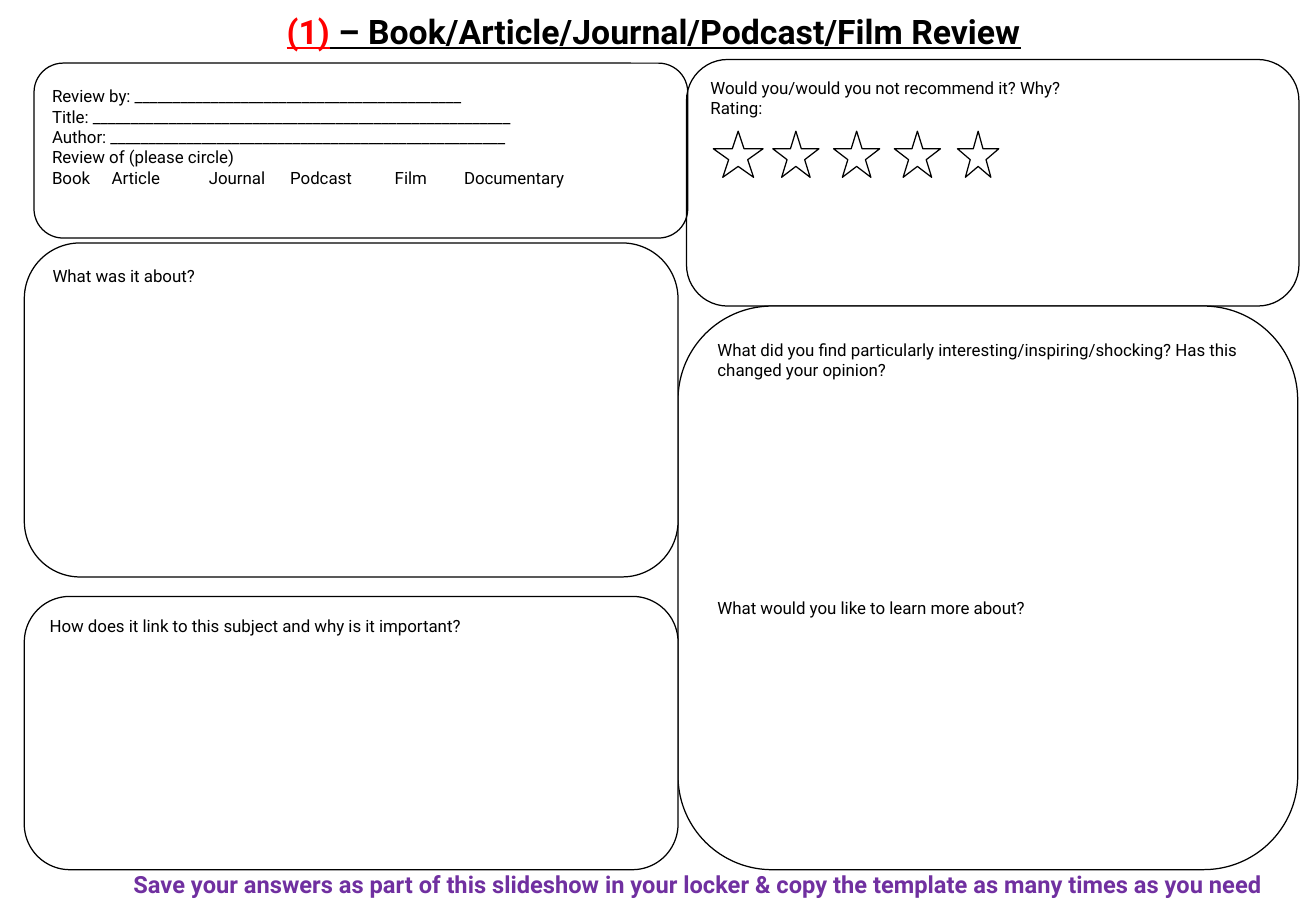
from lxml import etree
from pptx import Presentation
from pptx.dml.color import RGBColor
from pptx.enum.shapes import MSO_SHAPE
from pptx.enum.text import MSO_ANCHOR, PP_ALIGN
from pptx.oxml.ns import qn
from pptx.util import Pt

PX = 9144
PANEL = MSO_SHAPE.FLOWCHART_ALTERNATE_PROCESS
RECT = MSO_SHAPE.RECTANGLE
STAR = MSO_SHAPE.STAR_5_POINT
TOP = MSO_ANCHOR.TOP
LEFT = PP_ALIGN.LEFT
CENTER = PP_ALIGN.CENTER
FONT = "Roboto"
BLACK, WHITE, RED, PURPLE = "000000", "FFFFFF", "FF0000", "7030A0"

PANELS = [
    ((565, 49, 504, 203), ["Would you/would you not recommend it? Why?", "Rating:"]),
    ((558, 252, 510, 464), [
        "What did you find particularly interesting/inspiring/shocking? "
        "Has this changed your opinion?",
        "What would you like to learn more about?"]),
    ((20, 491, 538, 225), ["How does it link to this subject and why is it important?"]),
    ((20, 200, 538, 275), ["What was it about?"]),
    ((28, 52, 538, 144), []),
]
REVIEW_FIELDS = [
    "Review by: " + "_" * 43,
    "Title: " + "_" * 55,
    "Author: " + "_" * 52,
    "Review of (please circle)",
    "Book\tArticle\tJournal\tPodcast\tFilm\tDocumentary",
]
MEDIA_TABS = [49, 129, 196, 282, 339]
STARS = [(587, 41), (636, 38), (686, 38), (736, 38), (788, 34)]


def rgb(color):
    return RGBColor.from_string(color)


def px(*lengths):
    return [n * PX for n in lengths]


def add_shape(s, kind, box, fill=WHITE, line=BLACK):
    sp = s.shapes.add_shape(kind, *px(*box))
    sp.shadow.inherit = False
    if fill:
        sp.fill.solid()
        sp.fill.fore_color.rgb = rgb(fill)
    else:
        sp.fill.background()
    if line:
        sp.line.color.rgb = rgb(line)
        sp.line.width = Pt(0.75)
    else:
        sp.line.fill.background()
    return sp


def write(sp, lines, size=10, color=BLACK, bold=False, align=LEFT):
    tf = sp.text_frame
    tf.word_wrap = True
    tf.vertical_anchor = TOP
    tf.text = "\n".join(lines)
    for p in tf.paragraphs:
        p.alignment = align
        p.font.name = FONT
        p.font.size = Pt(size)
        p.font.bold = bold
        p.font.color.rgb = rgb(color)
    return tf.paragraphs


def set_tabs(p, stops):
    tabs = etree.Element(qn("a:tabLst"))
    for pos in px(*stops):
        etree.SubElement(tabs, qn("a:tab"), pos=str(pos), algn="l")
    p._p.get_or_add_pPr().insert(0, tabs)


def add_panels(s):
    for box, questions in PANELS:
        sp = add_shape(s, PANEL, box, fill=WHITE if questions else None)
        if questions:
            last = write(sp, questions)[-1]
            if last.text.startswith("What would"):
                last.space_before = Pt(129)


def add_title(s):
    sp = add_shape(s, RECT, (148, 4, 780, 40), line=None)
    p = write(sp, ["(1)"], size=20, bold=True, align=CENTER)[0]
    p.font.underline = True
    p.runs[0].font.color.rgb = rgb(RED)
    p.add_run().text = " – Book/Article/Journal/Podcast/Film Review"


def add_review_fields(s):
    sp = add_shape(s, RECT, (33, 66, 525, 103), line=None)
    set_tabs(write(sp, REVIEW_FIELDS)[-1], MEDIA_TABS)


def add_rating(s):
    for x, w in STARS:
        add_shape(s, STAR, (x, 108, w, 38))


def add_footer(s):
    sp = s.shapes.add_textbox(*px(33, 711, 1083, 34))
    write(sp, ["Save your answers as part of this slideshow in your locker "
               "& copy the template as many times as you need"],
          size=14, color=PURPLE, bold=True, align=CENTER)


def main():
    prs = Presentation()
    prs.slide_width, prs.slide_height = px(1083, 750)
    s = prs.slides.add_slide(prs.slide_layouts[6])
    add_panels(s)
    add_title(s)
    add_review_fields(s)
    add_rating(s)
    add_footer(s)
    prs.save("out.pptx")


if __name__ == "__main__":
    main()
